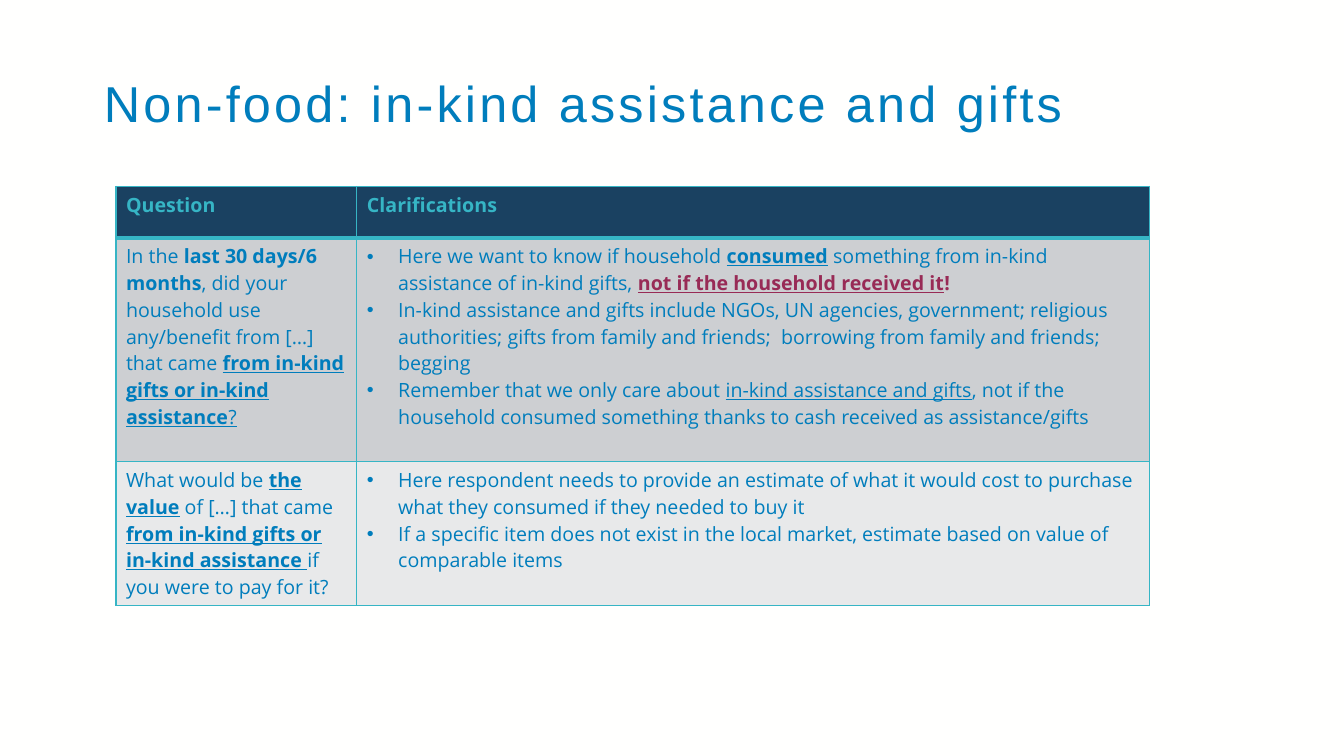
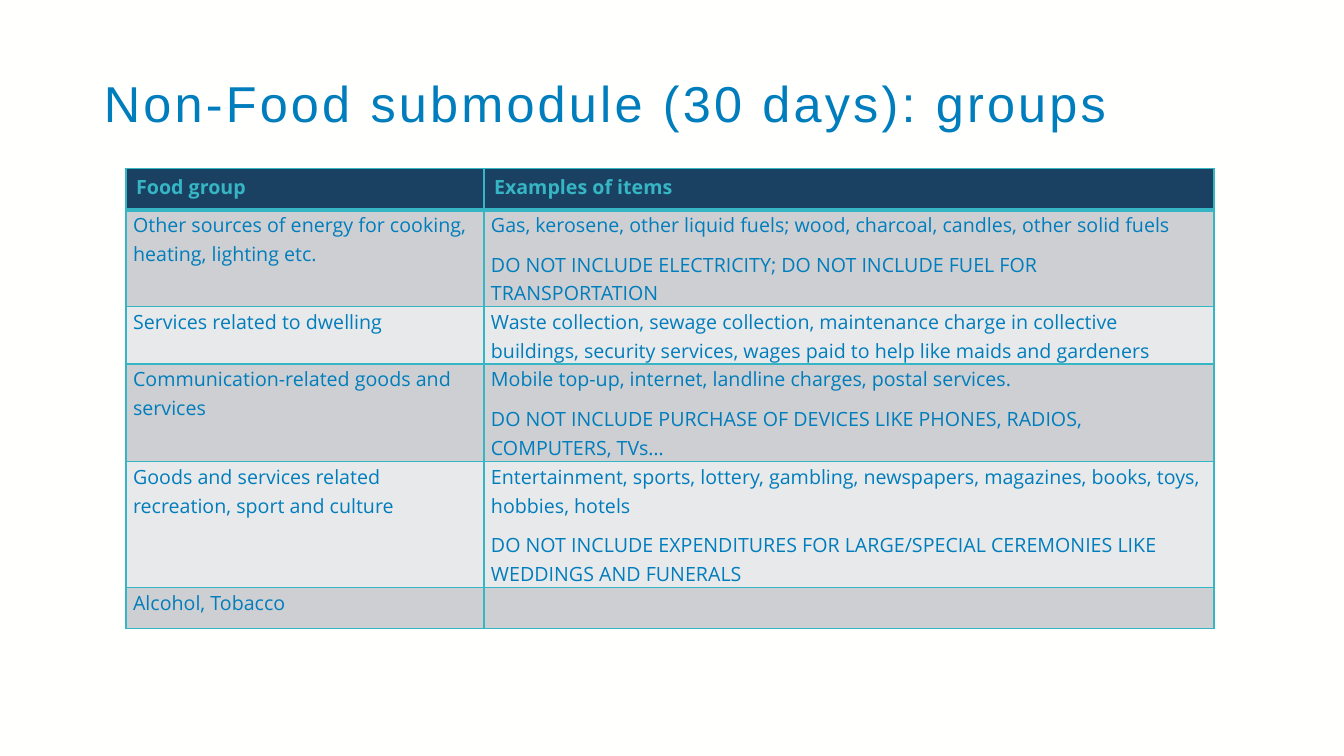
from lxml import etree
from pptx import Presentation
from pptx.dml.color import RGBColor
from pptx.enum.text import MSO_ANCHOR, MSO_AUTO_SIZE, PP_ALIGN
from pptx.oxml.ns import qn
from pptx.util import Inches, Pt

TOP = MSO_ANCHOR.TOP
LEFT = PP_ALIGN.LEFT
NO_AUTOSIZE = MSO_AUTO_SIZE.NONE

BLUE, TEAL, NAVY, CRIMSON = "007DBC", "36B5C5", "1A4161", "982B56"
BAND_FILLS = ["CDCFD2", "E8E9EA"]
PAGE_FILL = "FFFFFE"
TITLE_FONT, BODY_FONT = "Arial", "Open Sans"


def color(value):
    return RGBColor.from_string(value)


def write(para, spans, size=14, name=BODY_FONT, ink=BLUE, bold=False,
          tracking=None, bullet=False, line_spacing=None, space_after=None):
    """Fill a paragraph; a span is plain text or (text, marks) with marks
    b for bold, u for underlined and r for crimson."""
    if bullet:
        properties = para._p.get_or_add_pPr()
        properties.set("marL", str(Inches(0.31)))
        properties.set("indent", str(-Inches(0.31)))
        etree.SubElement(properties, qn("a:buFont"), typeface="Arial")
        etree.SubElement(properties, qn("a:buChar"), char="•")
    para.alignment = LEFT
    if line_spacing:
        para.line_spacing = line_spacing
    if space_after:
        para.space_after = Pt(space_after)
    for span in [spans] if isinstance(spans, str) else spans:
        text, marks = (span, "") if isinstance(span, str) else span
        run = para.add_run()
        run.text = text
        run.font.size = Pt(size)
        run.font.name = name
        run.font.bold = bold or "b" in marks
        run.font.underline = "u" in marks
        run.font.color.rgb = color(CRIMSON if "r" in marks else ink)
        if tracking:
            run._r.get_or_add_rPr().set("spc", str(round(tracking * 100)))


# Each cell is a list of paragraphs, each paragraph text or a list of spans.
assistance_rows = [
    (["Question"], ["Clarifications"]),
    ([["In the ", ("last 30 days/6 months", "b"),
       ", did your household use any/benefit from […] that came ",
       ("from in-kind gifts or in-kind assistance", "bu"), ("?", "u")]],
     [["Here we want to know if household ", ("consumed", "bu"),
       " something from in-kind assistance of in-kind gifts, ",
       ("not if the household received it", "bur"), ("!", "br")],
      "In-kind assistance and gifts include NGOs, UN agencies, government; religious "
      "authorities; gifts from family and friends;  borrowing from family and friends; begging",
      ["Remember that we only care about ", ("in-kind assistance and gifts", "u"),
       ", not if the household consumed something thanks to cash received as "
       "assistance/gifts"]]),
    ([["What would be ", ("the value", "bu"), " of […] that came ",
       ("from in-kind gifts or in-kind assistance", "bu"), (" ", "u"),
       "if you were to pay for it?"]],
     ["Here respondent needs to provide an estimate of what it would cost to purchase "
      "what they consumed if they needed to buy it",
      "If a specific item does not exist in the local market, estimate based on value of "
      "comparable items"]),
]
group_rows = [
    (["Food group"], ["Examples of items"]),
    (["Other sources of energy for cooking, heating, lighting etc."],
     ["Gas, kerosene, other liquid fuels; wood, charcoal, candles, other solid fuels",
      "DO NOT INCLUDE ELECTRICITY; DO NOT INCLUDE FUEL FOR TRANSPORTATION"]),
    (["Services related to dwelling"],
     ["Waste collection, sewage collection, maintenance charge in collective buildings, "
      "security services, wages paid to help like maids and gardeners"]),
    (["Communication-related goods and services"],
     ["Mobile top-up, internet, landline charges, postal services.",
      "DO NOT INCLUDE PURCHASE OF DEVICES LIKE PHONES, RADIOS, COMPUTERS, TVs…"]),
    (["Goods and services related recreation, sport and culture"],
     ["Entertainment, sports, lottery, gambling, newspapers, magazines, books, toys, "
      "hobbies, hotels",
      "DO NOT INCLUDE EXPENDITURES FOR LARGE/SPECIAL CEREMONIES LIKE WEDDINGS AND FUNERALS"]),
    (["Alcohol, Tobacco"], []),
]
pages = [
    {"title": "Non-food: in-kind assistance and gifts", "rows": assistance_rows,
     "left": 1.15, "top": 1.85, "widths": [2.39, 7.86], "heights": [0.51, 2.22, 1.42],
     "bulleted": True, "tight": False, "format": {}},
    {"title": "Non-Food submodule (30 days): groups", "rows": group_rows,
     "left": 1.25, "top": 1.67, "widths": [3.55, 7.24],
     "heights": [0.41, 0.96, 0.57, 0.97, 1.24, 0.41],
     "bulleted": False, "tight": True,
     "format": {"line_spacing": 1.07, "space_after": 8}},
]

deck = Presentation()
deck.slide_width, deck.slide_height = Inches(13.33), Inches(7.5)
background = deck.slide_master.background.fill
background.solid()
background.fore_color.rgb = color(PAGE_FILL)
title_only = deck.slide_layouts[5]

for page in pages:
    slide = deck.slides.add_slide(title_only)
    title = slide.shapes.title
    title.left, title.top = Inches(0.93), Inches(0.73)
    title.width, title.height = Inches(11.53), Inches(1.26)
    frame = title.text_frame
    frame.word_wrap = True
    frame.auto_size = NO_AUTOSIZE
    frame.vertical_anchor = TOP
    write(frame.paragraphs[0], page["title"], size=36, name=TITLE_FONT,
          tracking=2.3, line_spacing=0.9)

    widths, heights = page["widths"], page["heights"]
    table = slide.shapes.add_table(
        len(heights), len(widths), Inches(page["left"]), Inches(page["top"]),
        Inches(sum(widths)), Inches(sum(heights))).table
    table.horz_banding = False
    for column, width in zip(table.columns, widths):
        column.width = Inches(width)
    for row, height in zip(table.rows, heights):
        row.height = Inches(height)

    for row_index, row in enumerate(page["rows"]):
        header = row_index == 0
        for column_index, paragraphs in enumerate(row):
            cell = table.cell(row_index, column_index)
            borders = {"L": 1, "R": 1, "T": 3 if row_index == 1 else 1,
                       "B": 3 if header else 1}
            for side, weight in borders.items():
                line = etree.SubElement(cell._tc.get_or_add_tcPr(), qn(f"a:ln{side}"),
                                        w=str(Pt(weight)))
                paint = etree.SubElement(line, qn("a:solidFill"))
                etree.SubElement(paint, qn("a:srgbClr"), val=TEAL)
            cell.fill.solid()
            cell.fill.fore_color.rgb = color(
                NAVY if header else BAND_FILLS[(row_index - 1) % 2])
            cell.vertical_anchor = TOP
            if page["tight"] and not header:
                cell.margin_left = cell.margin_right = Inches(0.07)
                cell.margin_top = cell.margin_bottom = 0
            for index, spans in enumerate(paragraphs):
                frame = cell.text_frame
                para = frame.add_paragraph() if index else frame.paragraphs[0]
                if header:
                    write(para, spans, ink=TEAL, bold=True)
                else:
                    write(para, spans, bullet=page["bulleted"] and column_index == 1,
                          **page["format"])

deck.save("out.pptx")
